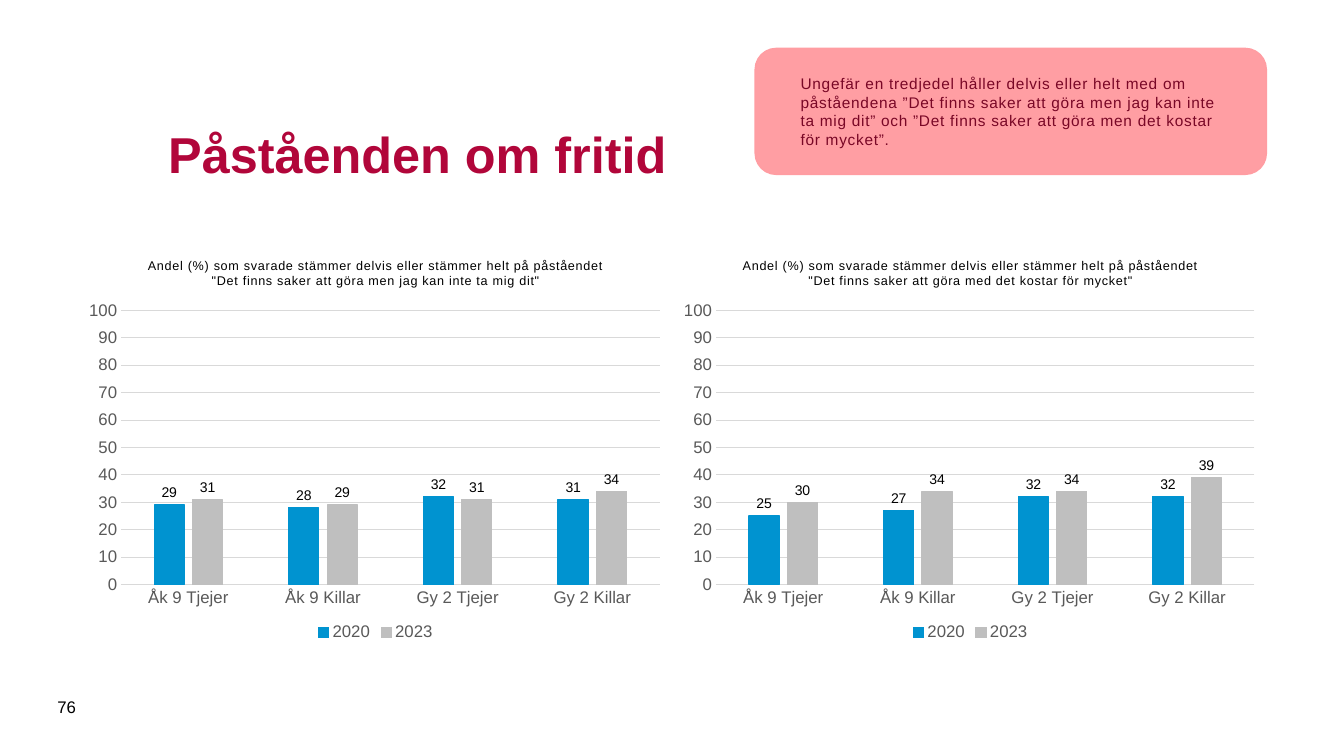
from pptx import Presentation
from pptx.chart.data import CategoryChartData
from pptx.dml.color import RGBColor
from pptx.enum.chart import XL_CHART_TYPE, XL_LABEL_POSITION, XL_LEGEND_POSITION, XL_TICK_MARK
from pptx.enum.shapes import MSO_SHAPE
from pptx.enum.text import MSO_ANCHOR, PP_ALIGN
from pptx.oxml import parse_xml
from pptx.oxml.ns import nsdecls, qn
from pptx.util import Inches, Pt

COLOURS = {
    "heading": "B1063A",
    "callout": "FF9DA2",
    "callout text": "790726",
    "text": "000000",
    "axis text": "595959",
    "grid": "D9D9D9",
    "2020": "0093D0",
    "2023": "BFBFBF",
}
GROUPS = ["Åk 9 Tjejer", "Åk 9 Killar", "Gy 2 Tjejer", "Gy 2 Killar"]
QUESTION = "Andel (%) som svarade stämmer delvis eller stämmer helt på påståendet "
CLAIMS = [
    ('"Det finns saker att göra men jag kan inte ta mig dit"',
     {"2020": [29, 28, 32, 31], "2023": [31, 29, 31, 34]}),
    ('"Det finns saker att göra med det kostar för mycket"',
     {"2020": [25, 27, 32, 32], "2023": [30, 34, 34, 39]}),
]
CALLOUT = ("Ungefär en tredjedel håller delvis eller helt med om påståendena "
           "”Det finns saker att göra men jag kan inte ta mig dit” och "
           "”Det finns saker att göra men det kostar för mycket”.")
NUMBER_FORMAT = "#,##0;#,##0"


def colour(name):
    return RGBColor.from_string(COLOURS[name])


def style_font(font, size, name, bold=False):
    for attribute, value in {"size": Pt(size), "name": "Arial", "bold": bold}.items():
        setattr(font, attribute, value)
    font.color.rgb = colour(name)


def style_line(line, name):
    line.color.rgb = colour(name)
    line.width = Pt(0.75)


def write(shape, text, size, name, bold=False):
    """Put one left-aligned, vertically centred paragraph in a shape."""
    frame = shape.text_frame
    frame.word_wrap = True
    frame.vertical_anchor = MSO_ANCHOR.MIDDLE
    paragraph = frame.paragraphs[0]
    paragraph.alignment = PP_ALIGN.LEFT
    run = paragraph.add_run()
    run.text = text
    style_font(run.font, size, name, bold)
    return run


def space_letters(run):
    run.font._element.set("spc", "50")


def add_label(slide, box, text, size, name, bold=False):
    label = slide.shapes.add_textbox(*map(Inches, box))
    write(label, text, size, name, bold)


def add_callout(slide, box, text):
    callout = slide.shapes.add_shape(MSO_SHAPE.ROUNDED_RECTANGLE, *map(Inches, box))
    callout.shadow.inherit = False
    callout.fill.solid()
    callout.fill.fore_color.rgb = colour("callout")
    fill_colour = callout._element.spPr.find(qn("a:solidFill"))[0]
    fill_colour.append(parse_xml(f'<a:alpha {nsdecls("a")} val="98000"/>'))
    callout.line.color.rgb = colour("callout")
    callout.line.width = Pt(1)
    insets = {"left": 0.39, "right": 0.39, "top": 0.2, "bottom": 0.2}
    for side, inset in insets.items():
        setattr(callout.text_frame, f"margin_{side}", Inches(inset))
    space_letters(write(callout, text, 11, "callout text"))


def style_axes(chart):
    groups, percent = chart.category_axis, chart.value_axis
    for axis in (groups, percent):
        axis.major_tick_mark = axis.minor_tick_mark = XL_TICK_MARK.NONE
        style_font(axis.tick_labels.font, 12, "axis text")
    style_line(groups.format.line, "grid")
    percent.format.line.fill.background()
    style_line(percent.major_gridlines.format.line, "grid")
    scale = {"minimum_scale": 0, "maximum_scale": 100, "major_unit": 10}
    for attribute, value in scale.items():
        setattr(percent, attribute, value)
    percent.tick_labels.number_format = NUMBER_FORMAT
    percent.tick_labels.number_format_is_linked = False


def style_years(plot):
    plot.gap_width, plot.overlap, plot.vary_by_categories = 219, -27, False
    for year in plot.series:
        year.format.fill.solid()
        year.format.fill.fore_color.rgb = colour(year.name)
        style_line(year.format.line, year.name)
        labels = year.data_labels
        formats = {"show_value": True, "position": XL_LABEL_POSITION.OUTSIDE_END,
                   "number_format": NUMBER_FORMAT, "number_format_is_linked": False}
        for attribute, value in formats.items():
            setattr(labels, attribute, value)
        style_font(labels.font, 10, "text")


def place_plot(chart, x, y, w, h):
    """Fix the inner plot area, in fractions of the chart."""
    area = chart._chartSpace.chart.plotArea
    for layout in area.findall(qn("c:layout")):
        area.remove(layout)
    parts = "".join(f'<c:{tag} val="{value}"/>' for tag, value in
                    {"xMode": "edge", "yMode": "edge", "x": x, "y": y, "w": w, "h": h}.items())
    area.insert(0, parse_xml(
        f'<c:layout {nsdecls("c")}><c:manualLayout><c:layoutTarget val="inner"/>'
        f'{parts}</c:manualLayout></c:layout>'))


def add_claim_chart(slide, box, claim, shares):
    data = CategoryChartData(number_format=NUMBER_FORMAT)
    data.categories = GROUPS
    for year, values in shares.items():
        data.add_series(year, values)
    chart = slide.shapes.add_chart(
        XL_CHART_TYPE.COLUMN_CLUSTERED, *map(Inches, box), data).chart
    style_font(chart.font, 10, "text")
    heading = chart.chart_title.text_frame.paragraphs[0].add_run()
    heading.text = QUESTION + claim
    style_font(heading.font, 9, "text")
    space_letters(heading)
    chart.chart_title.include_in_layout = False
    chart.has_legend = True
    chart.legend.position = XL_LEGEND_POSITION.BOTTOM
    chart.legend.include_in_layout = False
    style_font(chart.legend.font, 12, "axis text")
    style_axes(chart)
    style_years(chart.plots[0])
    place_plot(chart, 0.07, 0.17, 0.91, 0.68)


def main():
    deck = Presentation()
    deck.slide_width, deck.slide_height = Inches(13.33), Inches(7.5)
    layout = deck.slide_layouts.get_by_name("Blank")
    slide = deck.slides.add_slide(layout)
    add_label(slide, (1.57, 0.81, 10.24, 1.42), "Påståenden om fritid", 36, "heading", True)
    add_label(slide, (0.47, 6.81, 0.57, 0.4), "76", 12, "text")
    add_callout(slide, (7.49, 0.48, 5.07, 1.25), CALLOUT)
    for column, (claim, shares) in enumerate(CLAIMS):
        add_claim_chart(slide, (0.79 + 5.9 * column, 2.4, 5.87, 4), claim, shares)
    deck.save("out.pptx")


if __name__ == "__main__":
    main()
